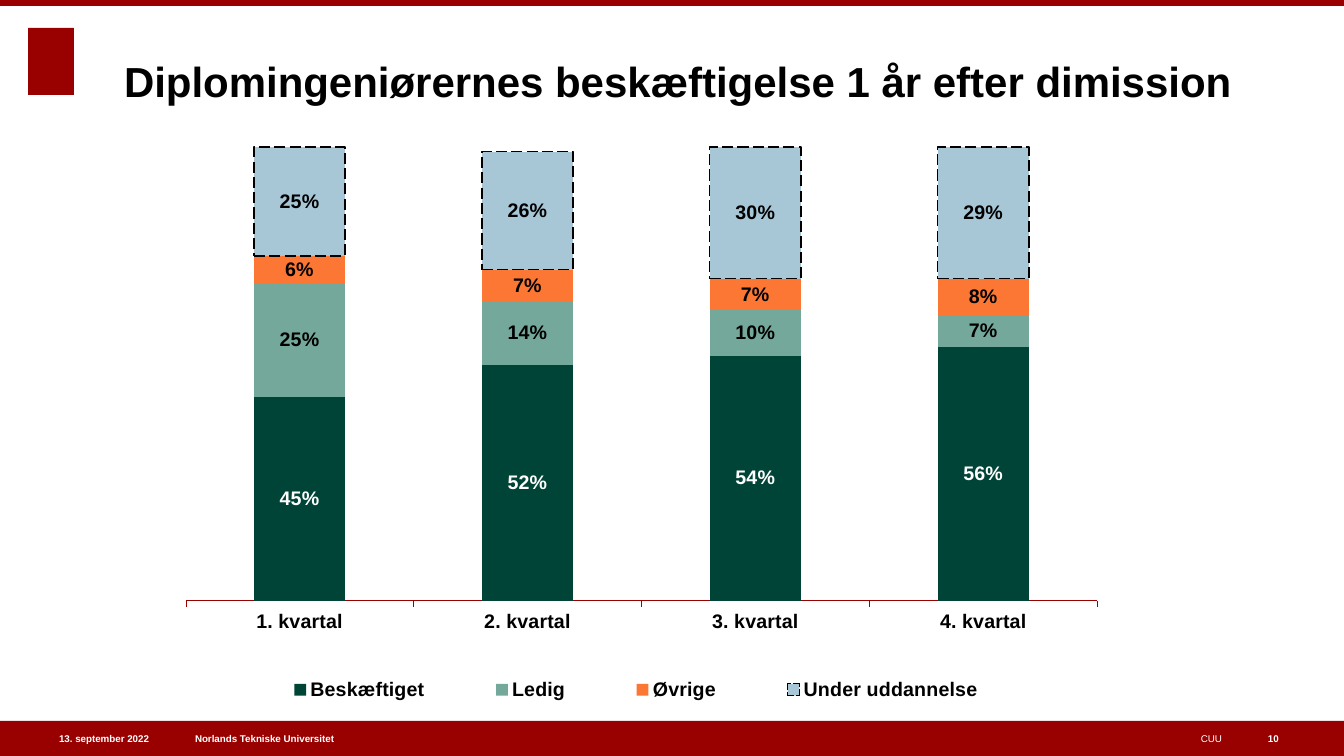
"""Build the slide on employment of engineering graduates by quarter."""
from pptx import Presentation
from pptx.chart.data import CategoryChartData
from pptx.dml.color import RGBColor
from pptx.enum.chart import XL_CHART_TYPE as CT, XL_LABEL_POSITION as LP
from pptx.enum.chart import XL_LEGEND_POSITION as LEG, XL_TICK_LABEL_POSITION as TLP
from pptx.enum.chart import XL_TICK_MARK as TM
from pptx.enum.dml import MSO_LINE
from pptx.enum.shapes import MSO_SHAPE
from pptx.enum.text import MSO_ANCHOR, MSO_AUTO_SIZE, PP_ALIGN
from pptx.oxml import parse_xml
from pptx.oxml.ns import nsdecls, qn
from pptx.util import Pt

PX = 914400 / 100.8
RED = RGBColor(0x99, 0x00, 0x00)
WHITE = RGBColor(0xFF, 0xFF, 0xFF)
BLACK = RGBColor(0x00, 0x00, 0x00)
DARK_GREEN = RGBColor(0x00, 0x43, 0x37)
SAGE = RGBColor(0x73, 0xA8, 0x9A)
ORANGE = RGBColor(0xFC, 0x76, 0x34)
PALE_BLUE = RGBColor(0xA7, 0xC7, 0xD7)


def px(*lengths):
    return [round(n * PX) for n in lengths]


def set_font(font, size, color, bold=True):
    values = {"name": "Arial", "size": Pt(size), "bold": bold}
    for key, value in values.items():
        setattr(font, key, value)
    font.color.rgb = color


prs = Presentation()
prs.slide_width, prs.slide_height = px(1344, 756)
s = prs.slides.add_slide(prs.slide_layouts[5])

bands = [
    (28, 28, 46, 67),
    (0, 721, 1344, 35),
    (0, 0, 1344, 6),
]
for box in bands:
    sp = s.shapes.add_shape(MSO_SHAPE.RECTANGLE, *px(*box))
    sp.shadow.inherit = False
    sp.fill.solid()
    sp.fill.fore_color.rgb = RED
    sp.line.fill.background()

footers = [
    ("Norlands Tekniske Universitet", 195, 375, PP_ALIGN.LEFT, True),
    ("13. september 2022", 27, 122, PP_ALIGN.RIGHT, True),
    ("CUU", 616, 606, PP_ALIGN.RIGHT, False),
    ("10", 1268, 47, PP_ALIGN.LEFT, True),
]
no_margins = dict.fromkeys(
    ("margin_left", "margin_top", "margin_right", "margin_bottom"), 0)
for text, left, width, align, bold in footers:
    tf = s.shapes.add_textbox(*px(left, 721, width, 35)).text_frame
    values = {**no_margins, "word_wrap": True, "vertical_anchor": MSO_ANCHOR.MIDDLE}
    for key, value in values.items():
        setattr(tf, key, value)
    p = tf.paragraphs[0]
    p.alignment = align
    r = p.add_run()
    r.text = text
    set_font(r.font, 7, WHITE, bold)

title = s.shapes.title
title.left, title.top, title.width, title.height = px(124, 47, 1109, 107)
tf = title.text_frame
values = {**no_margins, "margin_bottom": px(48)[0], "word_wrap": True,
          "auto_size": MSO_AUTO_SIZE.NONE, "vertical_anchor": MSO_ANCHOR.BOTTOM}
for key, value in values.items():
    setattr(tf, key, value)
p = tf.paragraphs[0]
p.alignment = PP_ALIGN.LEFT
r = p.add_run()
r.text = "Diplomingeniørernes beskæftigelse 1 år efter dimission"
set_font(r.font, 30, BLACK)

series = [
    ("Beskæftiget", (0.45, 0.52, 0.54, 0.56), DARK_GREEN, WHITE),
    ("Ledig", (0.25, 0.14, 0.10, 0.07), SAGE, BLACK),
    ("Øvrige", (0.06, 0.07, 0.07, 0.08), ORANGE, BLACK),
    ("Under uddannelse", (0.25, 0.26, 0.30, 0.29), PALE_BLUE, BLACK),
]
data = CategoryChartData(number_format="0%")
data.categories = [f"{n}. kvartal" for n in range(1, 5)]
for name, shares, _, _ in series:
    data.add_series(name, shares)
chart = s.shapes.add_chart(CT.COLUMN_STACKED, *px(140, 108, 992, 603), data).chart
chart.has_title = False
set_font(chart.font, 8, BLACK, False)

plot = chart.plots[0]
plot.gap_width, plot.overlap, plot.vary_by_categories = 150, 100, False
for ser, (_, _, fill, label_color) in zip(plot.series, series):
    ser.format.fill.solid()
    ser.format.fill.fore_color.rgb = fill
    labels = ser.data_labels
    values = {"show_value": True, "position": LP.CENTER,
              "number_format": "0%", "number_format_is_linked": False}
    for key, value in values.items():
        setattr(labels, key, value)
    set_font(labels.font, 14, label_color)
line = ser.format.line
line.color.rgb = BLACK
line.width = Pt(1)
line.dash_style = MSO_LINE.LONG_DASH

axis = chart.category_axis
axis.major_tick_mark = TM.OUTSIDE
axis.format.line.color.rgb = RED
axis.format.line.width = Pt(0.1)
set_font(axis.tick_labels.font, 14, BLACK)

values = {"minimum_scale": 0, "maximum_scale": 1, "major_unit": 0.5,
          "has_major_gridlines": False, "major_tick_mark": TM.NONE,
          "tick_label_position": TLP.NONE, "visible": False}
for key, value in values.items():
    setattr(chart.value_axis, key, value)

chart.has_legend = True
legend = chart.legend
legend.position = LEG.BOTTOM
legend.include_in_layout = False
set_font(legend.font, 14, BLACK)

plot_area = chart.element.find(".//" + qn("c:plotArea"))
legend_xml = chart.element.find(".//" + qn("c:legend"))
layouts = [
    (plot_area, 0, '<c:layoutTarget val="inner"/>', (0.046, 0.065, 0.919, 0.752)),
    (legend_xml, 1, "", (0.09, 0.94, 0.82, 0.05)),
]
for parent, index, target, fractions in layouts:
    for old in parent.findall(qn("c:layout")):
        parent.remove(old)
    modes = "".join(f'<c:{k}Mode val="edge"/>' for k in "xy")
    sizes = "".join(f'<c:{k} val="{v}"/>' for k, v in zip("xywh", fractions))
    parent.insert(index, parse_xml(
        f'<c:layout {nsdecls("c")}><c:manualLayout>{target}{modes}{sizes}'
        "</c:manualLayout></c:layout>"))

prs.save("out.pptx")
